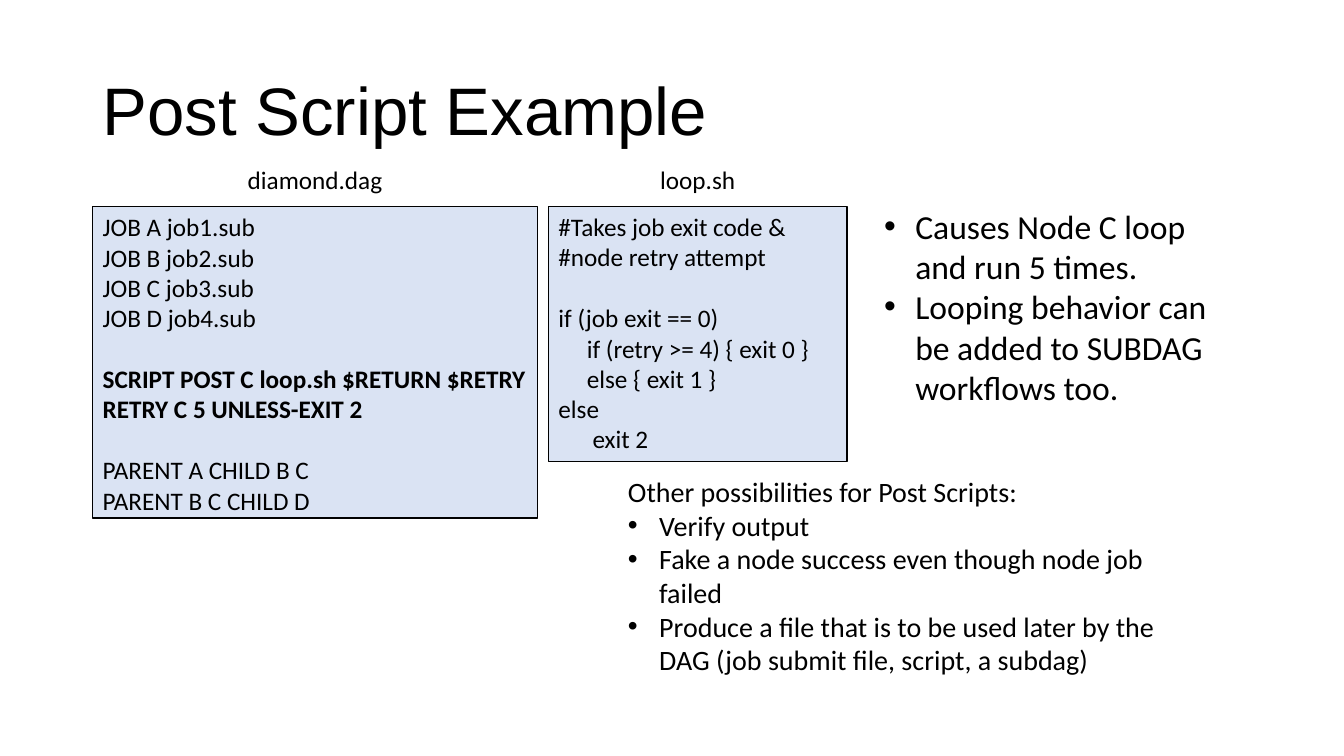
"""Build the Post Script Example slide."""
from lxml import etree
from pptx import Presentation
from pptx.dml.color import RGBColor
from pptx.enum.shapes import MSO_SHAPE
from pptx.enum.text import MSO_ANCHOR, PP_ALIGN
from pptx.oxml.ns import qn
from pptx.util import Inches, Pt

RECTANGLE = MSO_SHAPE.RECTANGLE
TOP, MIDDLE = MSO_ANCHOR.TOP, MSO_ANCHOR.MIDDLE
LEFT, CENTER = PP_ALIGN.LEFT, PP_ALIGN.CENTER

TITLE = "Post Script Example"
DIAMOND_LINES = [
    "JOB A job1.sub",
    "JOB B job2.sub",
    "JOB C job3.sub",
    "JOB D job4.sub",
    "",
    "SCRIPT POST C loop.sh $RETURN $RETRY",
    "RETRY C 5 UNLESS-EXIT 2",
    "",
    "PARENT A CHILD B C",
    "PARENT B C CHILD D",
]
LOOP_LINES = [
    "#Takes job exit code & #node retry attempt",
    "",
    "if (job exit == 0)",
    "     if (retry >= 4) { exit 0 }",
    "     else { exit 1 }",
    "else",
    "      exit 2",
]
EFFECTS = [
    "• Causes Node C loop and run 5 times.",
    "• Looping behavior can be added to SUBDAG workflows too.",
]
POSSIBILITIES = [
    "Other possibilities for Post Scripts:",
    "• Verify output",
    "• Fake a node success even though node job failed",
    "• Produce a file that is to be used later by the DAG (job submit file, script, a subdag)",
]
BOLD_STARTS = ("SCRIPT POST", "RETRY C")
BULLET = "• "

# Shares of the slide, in percent: left, top, width, height
TITLE_AREA = (6.9, 5.33, 86.27, 19.33)
EFFECTS_AREA = (65.04, 26.53, 27.68, 28.27)
POSSIBILITIES_AREA = (45.99, 62.13, 42.39, 28.27)
LABEL_TOP, LABEL_HEIGHT, CODE_TOP = 21.07, 5.33, 27.33
FILES = [
    ("diamond.dag", DIAMOND_LINES, 6.9, 33.08, 41.2),
    ("loop.sh", LOOP_LINES, 40.81, 22.2, 33.73),
]

BLACK, PALE_BLUE = "000000", "DAE3F3"
CODE_SIZE = 18
LINE_HEIGHT = 1.22
INDENT = Inches(0.31)

deck = Presentation()
deck.slide_width, deck.slide_height = Inches(13.33), Inches(7.5)
slide = deck.slides.add_slide(deck.slide_layouts[6])


def color(hex_code):
    """Turn a hex string into a colour."""
    return RGBColor.from_string(hex_code)


def place(area):
    """Turn percent shares into slide lengths."""
    sides = (deck.slide_width, deck.slide_height) * 2
    return [round(share * side / 100) for share, side in zip(area, sides)]


def add_bullet(paragraph):
    """Give a paragraph a round bullet with a hanging indent."""
    properties = paragraph._p.get_or_add_pPr()
    properties.set("marL", str(INDENT))
    properties.set("indent", str(-INDENT))
    etree.SubElement(properties, qn("a:buFont")).set("typeface", "Arial")
    etree.SubElement(properties, qn("a:buChar")).set("char", BULLET.strip())


def write(lines, area, size=CODE_SIZE, face="Calibri", align=LEFT,
          anchor=TOP, spacing=1.0, fill=None):
    """Write lines in an area; an empty line becomes space before the next."""
    if fill:
        holder = slide.shapes.add_shape(RECTANGLE, *place(area))
        holder.shadow.inherit = False
        holder.fill.solid()
        holder.fill.fore_color.rgb = color(fill)
        holder.line.color.rgb = color(BLACK)
        holder.line.width = Pt(1)
    else:
        holder = slide.shapes.add_textbox(*place(area))
    frame = holder.text_frame
    frame.word_wrap = True
    frame.vertical_anchor = anchor
    for index, line in enumerate(lines):
        if not line:
            continue
        paragraph = frame.add_paragraph() if index else frame.paragraphs[0]
        paragraph.alignment = align
        paragraph.line_spacing = spacing
        if index and not lines[index - 1]:
            paragraph.space_before = Pt(round(size * LINE_HEIGHT))
        if line.startswith(BULLET):
            add_bullet(paragraph)
        run = paragraph.add_run()
        run.text = line.removeprefix(BULLET)
        run.font.size = Pt(size)
        run.font.name = face
        run.font.bold = line.startswith(BOLD_STARTS)
        run.font.color.rgb = color(BLACK)


write([TITLE], TITLE_AREA, size=48, face="Arial", anchor=MIDDLE, spacing=0.9)
for file_name, code_lines, left, width, height in FILES:
    write(code_lines, (left, CODE_TOP, width, height), fill=PALE_BLUE)
    write([file_name], (left, LABEL_TOP, width, LABEL_HEIGHT), align=CENTER)
write(EFFECTS, EFFECTS_AREA, size=24)
write(POSSIBILITIES, POSSIBILITIES_AREA, size=20)

deck.save("out.pptx")
